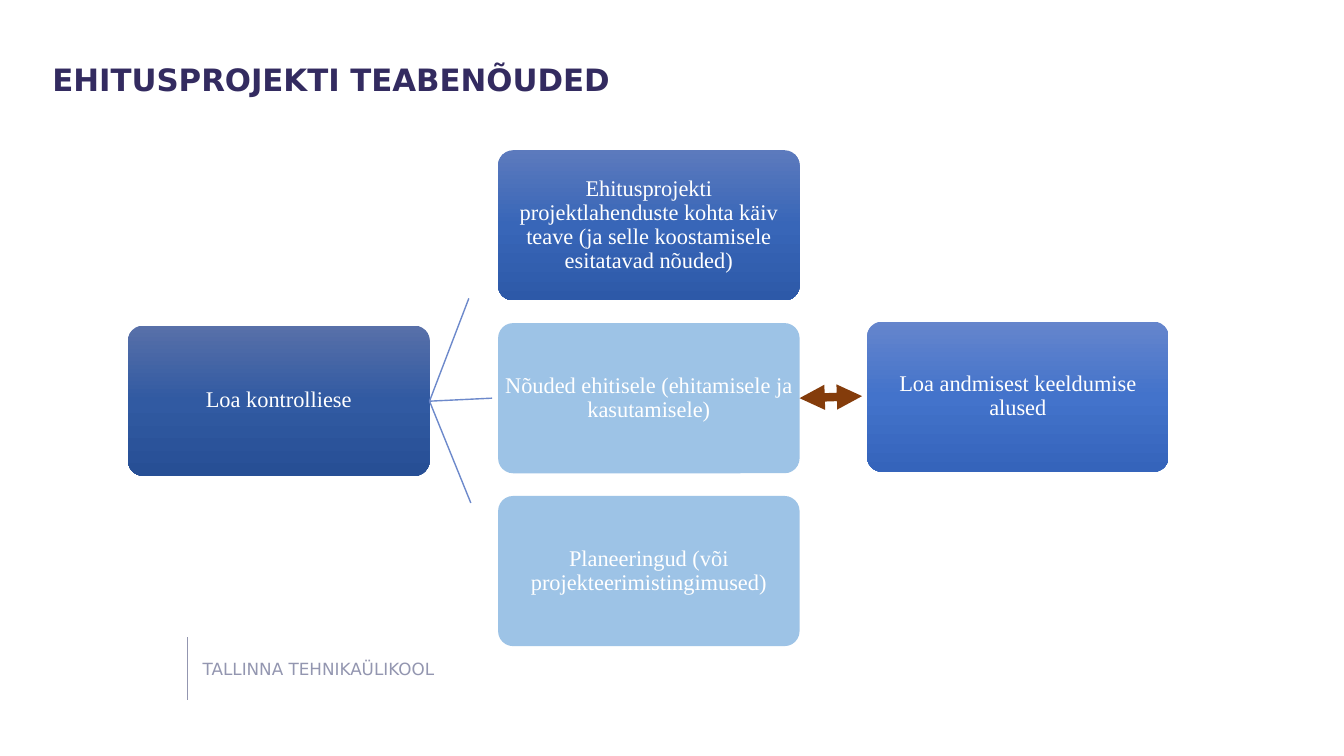
"""Build the slide on information requirements for a construction project."""
from copy import deepcopy

from lxml import etree
from pptx import Presentation
from pptx.dml.color import RGBColor
from pptx.enum.shapes import MSO_CONNECTOR, MSO_SHAPE
from pptx.enum.text import MSO_ANCHOR, PP_ALIGN
from pptx.oxml.ns import qn
from pptx.util import Inches, Pt

STRAIGHT = MSO_CONNECTOR.STRAIGHT
ROUNDED = MSO_SHAPE.ROUNDED_RECTANGLE
MIDDLE = MSO_ANCHOR.MIDDLE
CENTER = PP_ALIGN.CENTER

WHITE = RGBColor(0xFF, 0xFF, 0xFF)
PURPLE = RGBColor(0x33, 0x2B, 0x60)
GREY = RGBColor(0x93, 0x96, 0xB0)
LINK_BLUE = RGBColor(0x6D, 0x89, 0xCB)
BROWN = RGBColor(0x84, 0x3C, 0x0B)
PALE = [RGBColor(0x9D, 0xC3, 0xE6)]
DARK = [RGBColor(0x58, 0x70, 0xA9), RGBColor(0x31, 0x5A, 0xA2), RGBColor(0x27, 0x4F, 0x95)]
MEDIUM = [RGBColor(0x5C, 0x7A, 0xBD), RGBColor(0x38, 0x66, 0xB8), RGBColor(0x2D, 0x59, 0xA8)]
BRIGHT = [RGBColor(0x65, 0x85, 0xCC), RGBColor(0x43, 0x73, 0xCB), RGBColor(0x35, 0x64, 0xBB)]

NODE_WIDTH, NODE_HEIGHT = 2.99, 1.49
LEFT_COLUMN, MIDDLE_COLUMN, RIGHT_COLUMN = 1.27, 4.94, 8.6
TOP_ROW, ROW_STEP = 1.49, 1.715


def write(shape, text, font, size, color, inset=0, bold=False):
    frame = shape.text_frame
    frame.word_wrap = True
    frame.margin_left = frame.margin_right = Inches(inset)
    frame.margin_top = frame.margin_bottom = Inches(inset)
    para = frame.paragraphs[0]
    span = para.add_run()
    span.text = text
    span.font.name = font
    span.font.size = Pt(size)
    span.font.bold = bold
    span.font.color.rgb = color
    return para


def connect(start, end, color, width):
    points = [Inches(value) for value in (*start, *end)]
    connector = page.shapes.add_connector(STRAIGHT, *points)
    connector.line.color.rgb = color
    connector.line.width = Pt(width)
    etree.SubElement(connector._element.spPr, qn("a:effectLst"))
    return connector


deck = Presentation()
deck.slide_width = Inches(13.33)
deck.slide_height = Inches(7.5)
page = deck.slides.add_slide(deck.slide_layouts[6])

footer = page.shapes.add_textbox(Inches(2.01), Inches(6.53), Inches(3.02), Inches(0.19))
write(footer, "TALLINNA TEHNIKAÜLIKOOL", "DejaVu Sans", 12, GREY)
connect((1.86, 6.32), (1.86, 6.94), GREY, 0.5)

title = page.shapes.add_textbox(Inches(0.52), Inches(0.6), Inches(11.48), Inches(0.89))
write(title, "EHITUSPROJEKTI TEABENÕUDED", "DejaVu Sans", 22, PURPLE, bold=True)

nodes = [
    (LEFT_COLUMN, 3.23, DARK, "Loa kontrolliese"),
    (MIDDLE_COLUMN, TOP_ROW, MEDIUM,
     "Ehitusprojekti projektlahenduste kohta käiv teave (ja selle koostamisele esitatavad nõuded)"),
    (MIDDLE_COLUMN, TOP_ROW + ROW_STEP, PALE, "Nõuded ehitisele (ehitamisele ja kasutamisele)"),
    (MIDDLE_COLUMN, TOP_ROW + 2 * ROW_STEP, PALE, "Planeeringud (või projekteerimistingimused)"),
    (RIGHT_COLUMN, 3.19, BRIGHT, "Loa andmisest keeldumise alused"),
]
for left, top, colors, text in nodes:
    node = page.shapes.add_shape(
        ROUNDED, Inches(left), Inches(top), Inches(NODE_WIDTH), Inches(NODE_HEIGHT))
    node.adjustments[0] = 0.1
    node.shadow.inherit = False
    node.line.fill.background()
    if len(colors) == 1:
        node.fill.solid()
        node.fill.fore_color.rgb = colors[0]
    else:
        node.fill.gradient()
        node.fill.gradient_angle = 270
        stop_list = node._element.spPr.find(qn("a:gradFill")).find(qn("a:gsLst"))
        stop_list.insert(1, deepcopy(stop_list[0]))
        for stop, position, color in zip(node.fill.gradient_stops, (0, 0.5, 1), colors):
            stop.position = position
            stop.color.rgb = color
    node.text_frame.vertical_anchor = MIDDLE
    para = write(node, text, "Times New Roman", 16, WHITE, inset=0.01)
    para.alignment = CENTER
    para.line_spacing = 0.9

for end in [(4.65, 2.96), (4.88, 3.95), (4.67, 4.99)]:
    connect((LEFT_COLUMN + NODE_WIDTH, 3.98), end, LINK_BLUE, 1)

double_arrow = connect((MIDDLE_COLUMN + NODE_WIDTH, 3.95), (8.55, 3.93), BROWN, 6)
for arrow_end in ("a:headEnd", "a:tailEnd"):
    etree.SubElement(double_arrow.line._get_or_add_ln(), qn(arrow_end), type="triangle")

deck.save("out.pptx")
